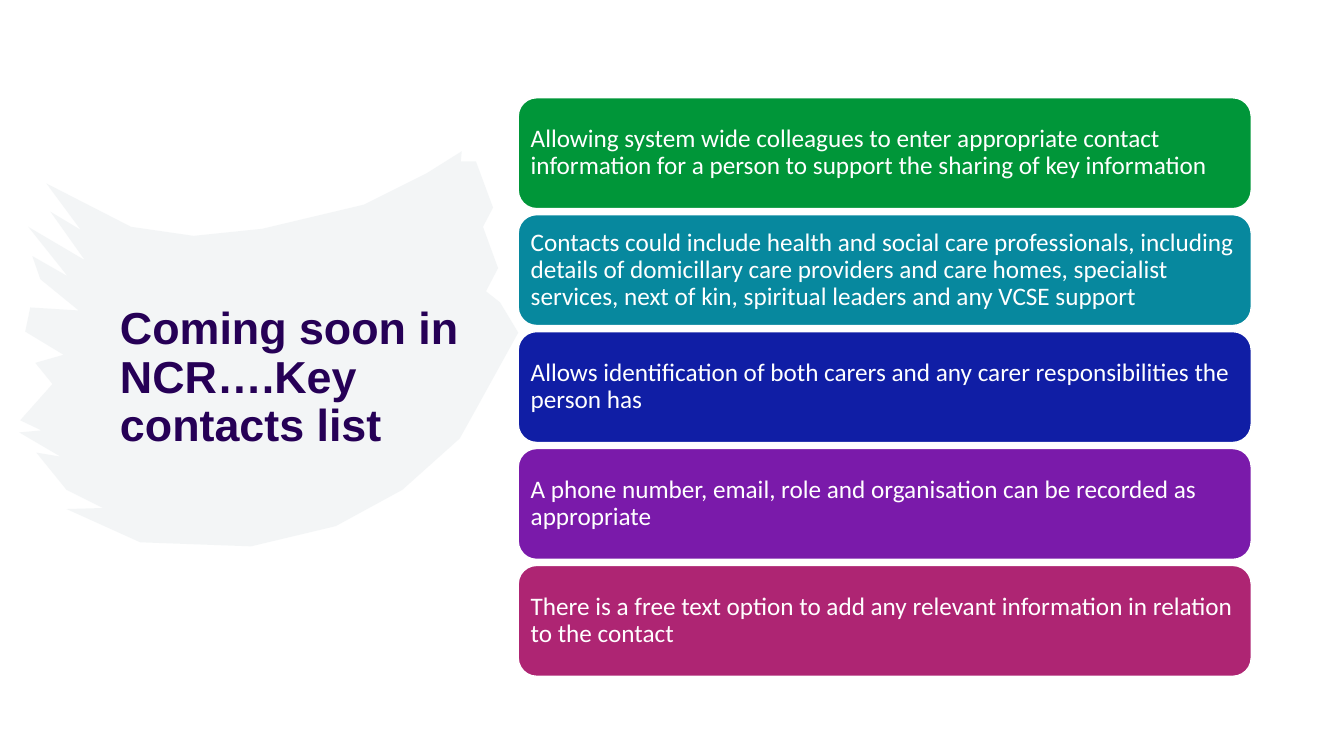
import pptx
import pptx.dml.color
import pptx.enum.shapes
import pptx.enum.text
import pptx.oxml
import pptx.oxml.ns
import pptx.util

Inches = pptx.util.Inches
RGBColor = pptx.dml.color.RGBColor

WHITE = RGBColor(0xFF, 0xFF, 0xFF)
PALE_GREY = RGBColor(0xE8, 0xED, 0xEE)
DEEP_PURPLE = RGBColor(0x26, 0x00, 0x56)
GREEN = RGBColor(0x00, 0x96, 0x39)
TEAL = RGBColor(0x07, 0x88, 0x9E)
BLUE = RGBColor(0x10, 0x1E, 0xA5)
VIOLET = RGBColor(0x7A, 0x1A, 0xAA)
MAGENTA = RGBColor(0xAE, 0x25, 0x73)

# Brush stroke outline, clockwise, in hundredths of an inch
BRUSH_OUTLINE = [
    (458, 150), (457, 160), (472, 160), (489, 206), (479, 225), (494, 266),
    (482, 289), (496, 300), (514, 330), (476, 399), (456, 435), (399, 486),
    (333, 522), (249, 542), (139, 538), (66, 505), (102, 504), (66, 486),
    (36, 449), (60, 453), (19, 429), (41, 427), (20, 417), (52, 381),
    (35, 360), (63, 352), (25, 329), (30, 305), (78, 308), (40, 277),
    (32, 254), (67, 274), (28, 225), (84, 258), (50, 210), (80, 228),
    (46, 182), (130, 225), (192, 234), (260, 227), (361, 203), (423, 172),
]

CONTACT_POINTS = [
    (GREEN, "Allowing system wide colleagues to enter appropriate contact "
            "information for a person to support the sharing of key information"),
    (TEAL, "Contacts could include health and social care professionals, "
           "including details of domicillary care providers and care homes, "
           "specialist services, next of kin, spiritual leaders and any VCSE support"),
    (BLUE, "Allows identification of both carers and any carer "
           "responsibilities the person has"),
    (VIOLET, "A phone number, email, role and organisation can be recorded "
             "as appropriate"),
    (MAGENTA, "There is a free text option to add any relevant information "
              "in relation to the contact"),
]
BAR_TOP = 0.97
BAR_PITCH = 1.16

TITLE_FORMAT = {"name": "Arial", "size": pptx.util.Pt(32), "bold": True}
BAR_FORMAT = {"name": "Calibri", "size": pptx.util.Pt(18)}


def write_text(shape, text, font_format, color):
    """Fill a shape with one left-aligned, vertically centred paragraph."""
    frame = shape.text_frame
    frame.word_wrap = True
    frame.auto_size = pptx.enum.text.MSO_AUTO_SIZE.NONE
    frame.vertical_anchor = pptx.enum.text.MSO_ANCHOR.MIDDLE
    frame.text = text
    paragraph = frame.paragraphs[0]
    paragraph.alignment = pptx.enum.text.PP_ALIGN.LEFT
    paragraph.line_spacing = 0.9
    font = paragraph.runs[0].font
    for attribute, value in font_format.items():
        setattr(font, attribute, value)
    font.color.rgb = color


presentation = pptx.Presentation()
presentation.slide_width = Inches(13.33)
presentation.slide_height = Inches(7.5)
slide = presentation.slides.add_slide(presentation.slide_layouts.get_by_name("Title Only"))

# Title
title = slide.shapes.title
title.left, title.top = Inches(1.09), Inches(0.75)
title.width, title.height = Inches(3.82), Inches(6.01)
write_text(title, "Coming soon in NCR….Key contacts list", TITLE_FORMAT, DEEP_PURPLE)

# Half-transparent brush stroke behind the title
builder = slide.shapes.build_freeform(*BRUSH_OUTLINE[0], scale=Inches(0.01))
builder.add_line_segments(BRUSH_OUTLINE[1:], close=True)
brush = builder.convert_to_shape()
brush.shadow.inherit = False
brush.fill.solid()
brush.fill.fore_color.rgb = PALE_GREY
brush.line.fill.background()
brush_color = brush.element.spPr.find(".//" + pptx.oxml.ns.qn("a:srgbClr"))
brush_color.append(pptx.oxml.parse_xml(
    f'<a:alpha {pptx.oxml.ns.nsdecls("a")} val="50000"/>'))
title.element.addprevious(brush.element)

# Stack of coloured bars
for index, (color, text) in enumerate(CONTACT_POINTS):
    bar = slide.shapes.add_shape(
        pptx.enum.shapes.MSO_SHAPE.ROUNDED_RECTANGLE,
        Inches(5.14), Inches(BAR_TOP + index * BAR_PITCH), Inches(7.27), Inches(1.1))
    bar.shadow.inherit = False
    bar.fill.solid()
    bar.fill.fore_color.rgb = color
    bar.line.color.rgb = WHITE
    bar.line.width = pptx.util.Pt(1)
    # The rounded corners already inset the text by about 0.05 inch
    bar.text_frame.margin_left = bar.text_frame.margin_right = Inches(0.07)
    write_text(bar, text, BAR_FORMAT, WHITE)

presentation.save("out.pptx")
